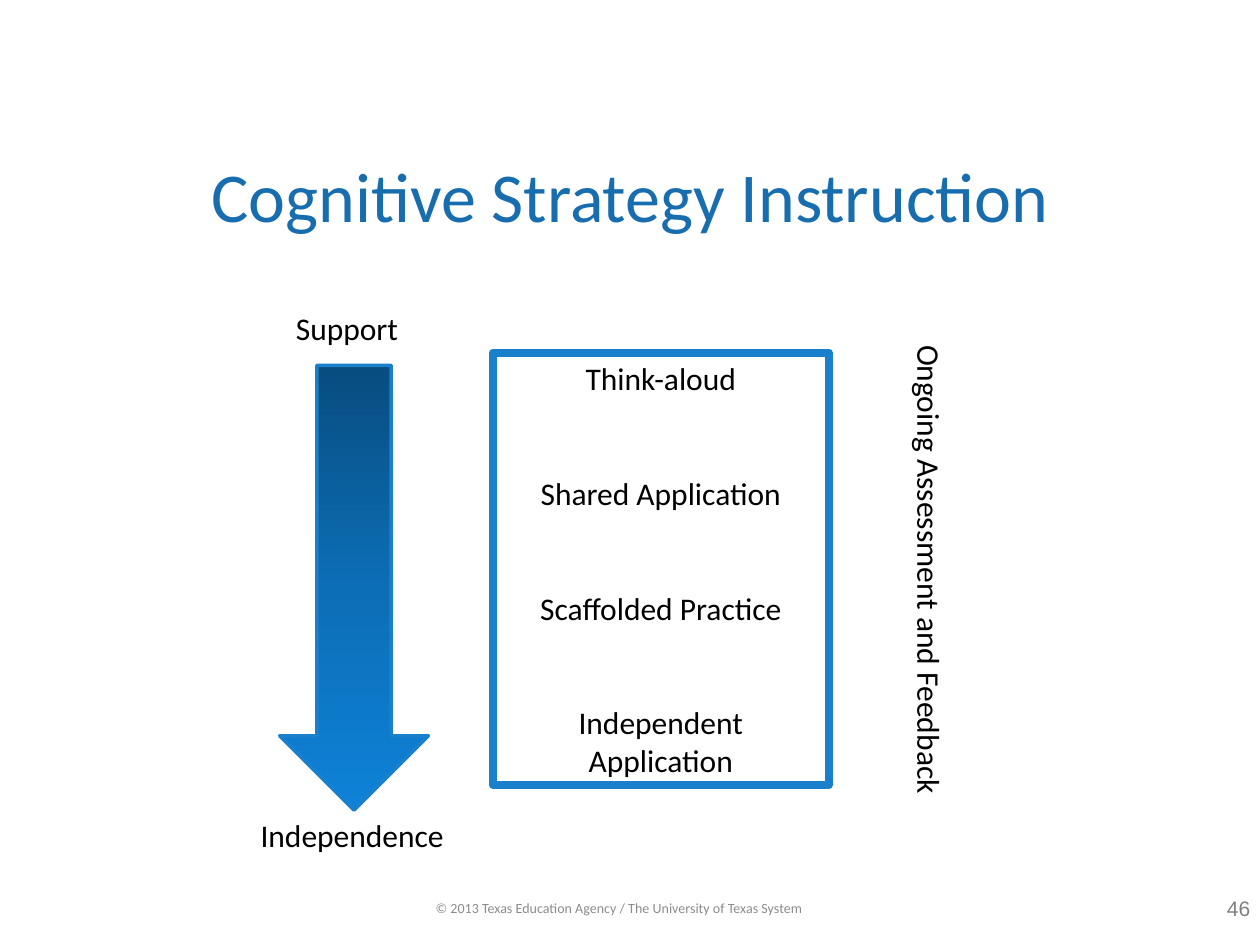
import copy

import pptx
import pptx.dml.color
import pptx.enum.shapes
import pptx.enum.text
import pptx.oxml.ns
import pptx.util

Inches = pptx.util.Inches
Align = pptx.enum.text.PP_ALIGN
Anchor = pptx.enum.text.MSO_ANCHOR
Preset = pptx.enum.shapes.MSO_SHAPE

# Content
TITLE = "Cognitive Strategy Instruction"
STAGES = ["Think-aloud", "Shared Application", "Scaffolded Practice", "Independent Application"]
ARROW_LABELS = [
    ("Support", (2.25, 2.4, 1.17, 0.4)),
    ("Independence", (1.97, 6.43, 1.76, 0.4)),
]
SIDE_LABEL = "Ongoing Assessment and Feedback"
COPYRIGHT = "© 2013 Texas Education Agency / The University of Texas System"
SLIDE_NUMBER = "46"

# Colours and type sizes
THEME = {
    "font": "Calibri", "number_font": "Arial",
    "title": "176DAD", "text": "000000", "footer": "8C8C8C", "number": "808080",
    "outline": "1B80CB",
    "gradient": [(0, "084D80"), (0.5, "0C6EB6"), (1, "0E82D8")],
    "title_size": 40, "text_size": 18, "number_size": 12, "footer_size": 8,
    "stage_gap": 44,
}


def rgb(name):
    return pptx.dml.color.RGBColor.from_string(THEME[name])


def box(place):
    return [Inches(length) for length in place]


def write(shape, *lines, size="text_size", color="text", font="font",
          align=Align.LEFT, anchor=Anchor.TOP, gap=0):
    frame = shape.text_frame
    frame.word_wrap = True
    frame.vertical_anchor = anchor
    for index, line in enumerate(lines):
        paragraph = frame.add_paragraph() if index else frame.paragraphs[0]
        paragraph.text = line
        paragraph.alignment = align
        paragraph.space_before = pptx.util.Pt(gap if index else 0)
        paragraph.font.name = THEME[font]
        paragraph.font.size = pptx.util.Pt(THEME[size])
        paragraph.font.color.rgb = rgb(color)


def add_outlined(slide, preset, place, width):
    shape = slide.shapes.add_shape(preset, *box(place))
    shape.shadow.inherit = False
    shape.line.color.rgb = rgb("outline")
    shape.line.width = pptx.util.Pt(width)
    return shape


def fill_gradient(shape, stops):
    shape.fill.gradient()
    shape.fill.gradient_angle = 270
    stop_list = next(shape._element.spPr.iter(pptx.oxml.ns.qn("a:gsLst")))
    while len(stop_list) < len(stops):
        stop_list.append(copy.deepcopy(stop_list[0]))
    for stop, (position, color) in zip(shape.fill.gradient_stops, stops):
        stop.position = position
        stop.color.rgb = pptx.dml.color.RGBColor.from_string(color)


def main():
    presentation = pptx.Presentation()
    presentation.slide_width, presentation.slide_height = Inches(10), Inches(7.5)
    slide = presentation.slides.add_slide(presentation.slide_layouts[5])

    # Title
    title = slide.shapes.title
    title.left, title.top, title.width, title.height = box((0, 0.92, 10, 1.25))
    write(title, TITLE, size="title_size", color="title", align=Align.CENTER, anchor=Anchor.MIDDLE)

    # Arrow from support to independence
    arrow = add_outlined(slide, Preset.DOWN_ARROW, (2.22, 2.9, 1.18, 3.53), 2)
    fill_gradient(arrow, THEME["gradient"])
    for label, place in ARROW_LABELS:
        write(slide.shapes.add_textbox(*box(place)), label)

    # Stages of instruction
    stages = add_outlined(slide, Preset.RECTANGLE, (3.91, 2.8, 2.67, 3.43), 4.5)
    stages.fill.background()
    write(stages, *STAGES, align=Align.CENTER, gap=THEME["stage_gap"])

    # Label reading downwards
    side = slide.shapes.add_textbox(*box((7.08, 2.64, 0.5, 3.84)))
    write(side, SIDE_LABEL)
    side.text_frame._txBody.bodyPr.set("vert", "vert")

    # Footer
    footer = slide.shapes.add_textbox(*box((2.08, 7.08, 5.67, 0.25)))
    write(footer, COPYRIGHT, size="footer_size", color="footer",
          align=Align.CENTER, anchor=Anchor.MIDDLE)
    number = slide.shapes.add_textbox(*box((9.58, 7.07, 0.5, 0.27)))
    write(number, SLIDE_NUMBER, size="number_size", color="number", font="number_font",
          align=Align.CENTER, anchor=Anchor.MIDDLE)

    presentation.save("out.pptx")


if __name__ == "__main__":
    main()
